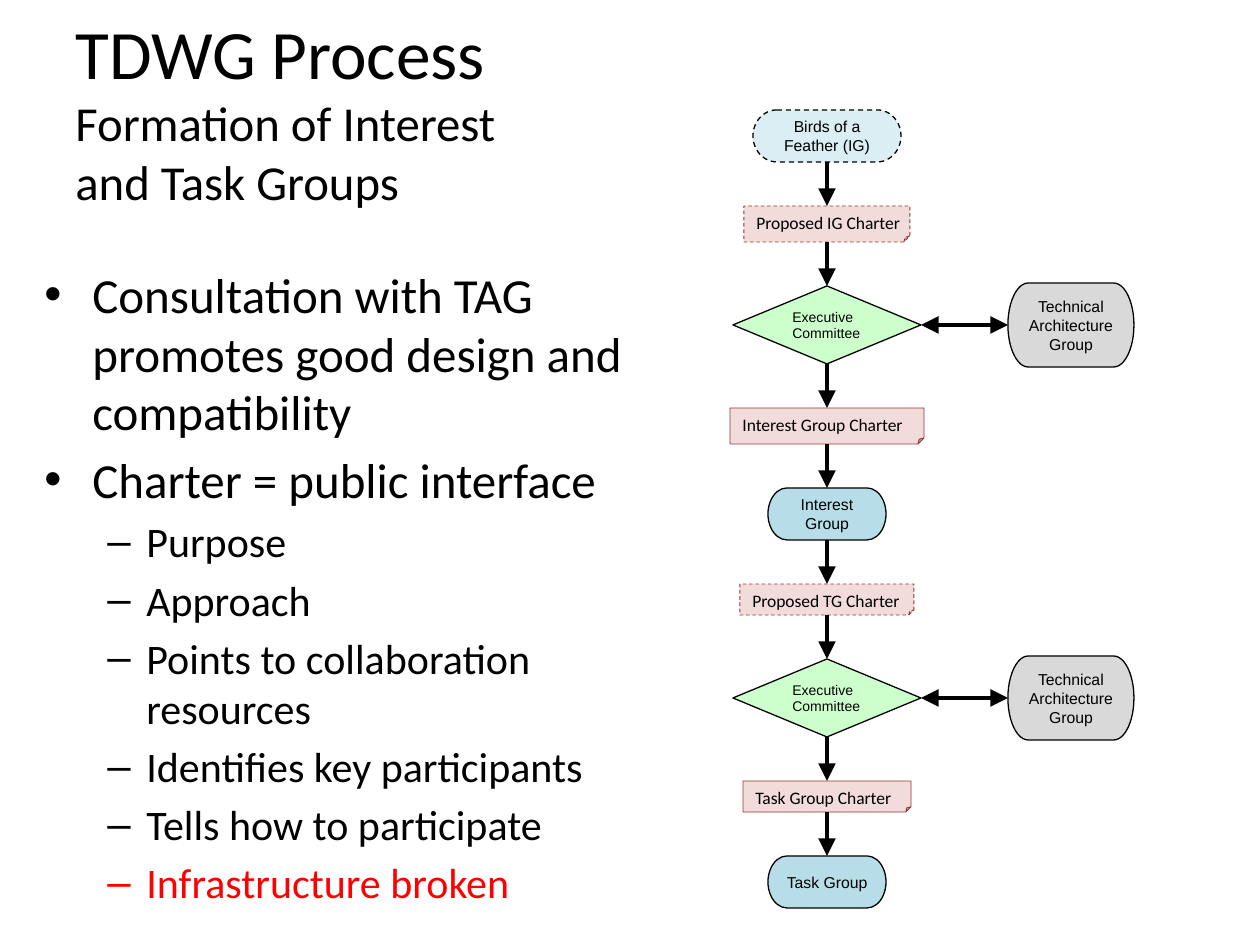
from dataclasses import dataclass

from lxml import etree
from pptx import Presentation
from pptx import util as u
from pptx.dml.color import RGBColor
from pptx.enum import dml, shapes, text
from pptx.oxml.ns import qn

SCALE = 914400 / 126  # EMU in one px
TOP, LEFT, BOTTOM, RIGHT = range(4)  # connection sites


@dataclass(frozen=True)
class Theme:
    black: str = "000000"
    alert: str = "FF0000"
    group: str = "B7DEE8"
    charter: str = "F2DCDB"
    charter_edge: str = "953735"
    decision: str = "CCFFCC"
    advisor: str = "D9D9D9"
    heading_font: str = "Calibri"
    label_font: str = "Arial"
    title: float = 39.6
    subtitle: float = 27.9
    point: float = 28
    subpoint: float = 24
    charter_size: float = 10
    group_size: float = 9
    decision_size: float = 8


THEME = Theme()


def px(length):
    return u.Emu(round(length * SCALE))


def rgb(value):
    return RGBColor.from_string(value)


def add_run(paragraph, words, size, font, color=THEME.black):
    """Add words run by run, with a line break between lines."""
    for number, line in enumerate(words.split("\n")):
        if number:
            paragraph.add_line_break()
        run = paragraph.add_run()
        run.text = line
        run.font.size = u.Pt(size)
        run.font.name = font
        run.font.color.rgb = rgb(color)


def add_node(slide, preset, box, fill, words, size, font=THEME.label_font,
             edge=THEME.black, weight=0.75, dashed=False):
    node = slide.shapes.add_shape(preset, *map(px, box))
    node.shadow.inherit = False
    node.fill.solid()
    node.fill.fore_color.rgb = rgb(fill)
    node.line.color.rgb = rgb(edge)
    node.line.width = u.Pt(weight)
    if dashed:
        node.line.dash_style = dml.MSO_LINE.DASH
    frame = node.text_frame
    frame.word_wrap = True
    frame.vertical_anchor = text.MSO_ANCHOR.MIDDLE
    frame.paragraphs[0].alignment = text.PP_ALIGN.CENTER
    add_run(frame.paragraphs[0], words, size, font)
    return node


def add_group(slide, box, words, fill=THEME.group, forming=False):
    node = add_node(slide, shapes.MSO_SHAPE.FLOWCHART_TERMINATOR, box, fill,
                    words, THEME.group_size, dashed=forming)
    if forming:
        color = node.element.spPr.find(qn("a:solidFill"))[0]
        etree.SubElement(color, qn("a:alpha"), val="50000")
    return node


def add_charter(slide, box, words, proposed=False):
    node = add_node(slide, shapes.MSO_SHAPE.FOLDED_CORNER, box, THEME.charter,
                    words, THEME.charter_size, THEME.heading_font,
                    THEME.charter_edge, 0.5, proposed)
    node.text_frame.word_wrap = not proposed
    node.text_frame.vertical_anchor = text.MSO_ANCHOR.TOP
    node.text_frame.paragraphs[0].alignment = text.PP_ALIGN.LEFT
    return node


def add_decision(slide, box, words):
    node = add_node(slide, shapes.MSO_SHAPE.DIAMOND, box, THEME.decision,
                    words, THEME.decision_size)
    node.text_frame.margin_right = 0
    node.text_frame.paragraphs[0].alignment = text.PP_ALIGN.LEFT
    return node


def add_arrow(slide, start, start_site, end, end_site, ends=("tailEnd",)):
    arrow = slide.shapes.add_connector(shapes.MSO_CONNECTOR.STRAIGHT, 0, 0, 0, 0)
    arrow.begin_connect(start, start_site)
    arrow.end_connect(end, end_site)
    arrow.line.color.rgb = rgb(THEME.black)
    arrow.line.width = u.Pt(2)
    properties = arrow.element.spPr
    line = properties.find(qn("a:ln"))
    for tip in ends:
        etree.SubElement(line, qn(f"a:{tip}"), type="triangle", w="lg", len="lg")
    etree.SubElement(properties, qn("a:effectLst"))


def add_text_frame(slide, box):
    frame = slide.shapes.add_textbox(*map(px, box)).text_frame
    frame.word_wrap = True
    return frame


def add_bullet(paragraph, words, nested=False, color=THEME.black):
    size = THEME.subpoint if nested else THEME.point
    margin, hang, mark = (102, 39, "–") if nested else (48, 48, "•")
    paragraph.level = int(nested)
    paragraph.space_before = u.Pt(4.4 if nested else 5)
    properties = paragraph._p.get_or_add_pPr()
    properties.set("marL", str(px(margin)))
    properties.set("indent", str(-px(hang)))
    etree.SubElement(properties, qn("a:buFont"), typeface=THEME.label_font)
    etree.SubElement(properties, qn("a:buChar"), char=mark)
    add_run(paragraph, words, size, THEME.heading_font, color)


def add_title(slide):
    frame = add_text_frame(slide, (63, 31, 588, 158))
    frame.vertical_anchor = text.MSO_ANCHOR.MIDDLE
    heading = frame.paragraphs[0]
    add_run(heading, "TDWG Process", THEME.title, THEME.heading_font)
    heading.add_line_break()
    add_run(heading, "Formation of Interest\nand Task Groups",
            THEME.subtitle, THEME.heading_font)


def add_points(slide):
    frame = add_text_frame(slide, (32, 258, 620, 624))
    points = [
        ("Consultation with TAG promotes good design and compatibility", False),
        ("Charter = public interface", False),
        ("Purpose", True),
        ("Approach", True),
        ("Points to collaboration resources", True),
        ("Identifies key participants", True),
        ("Tells how to participate", True),
        ("Infrastructure broken", True, THEME.alert),
    ]
    for number, point in enumerate(points):
        paragraph = frame.add_paragraph() if number else frame.paragraphs[0]
        add_bullet(paragraph, *point)


def add_process(slide):
    center, top, gap = 827, 110, 44
    committee = "Executive\nCommittee"
    # Builder, width, height, words, tentative step
    steps = [
        (add_group, 148, 52, "Birds of a\nFeather (IG)", True),
        (add_charter, 166, 36, "Proposed IG Charter", True),
        (add_decision, 188, 78, committee),
        (add_charter, 194, 36, "Interest Group Charter"),
        (add_group, 118, 52, "Interest Group"),
        (add_charter, 174, 31, "Proposed TG Charter", True),
        (add_decision, 188, 78, committee),
        (add_charter, 168, 31, "Task Group Charter"),
        (add_group, 118, 52, "Task Group"),
    ]
    previous = None
    for builder, width, height, words, *tentative in steps:
        box = (center - width // 2, top, width, height)
        if builder is add_group:
            step = add_group(slide, box, words, forming=bool(tentative))
        else:
            step = builder(slide, box, words, *tentative)
        if previous:
            add_arrow(slide, previous, BOTTOM, step, TOP)
        # Each decision is taken together with the advisors
        if builder is add_decision:
            advisor = add_group(slide, (1008, top + (height - 84) // 2, 126, 84),
                                "Technical\nArchitecture Group", THEME.advisor)
            add_arrow(slide, step, RIGHT, advisor, LEFT, ("headEnd", "tailEnd"))
        previous = step
        top += height + gap


def main():
    deck = Presentation()
    deck.slide_width, deck.slide_height = px(1260), px(945)
    slide = deck.slides.add_slide(deck.slide_layouts[6])
    add_process(slide)
    add_title(slide)
    add_points(slide)
    deck.save("out.pptx")


if __name__ == "__main__":
    main()
